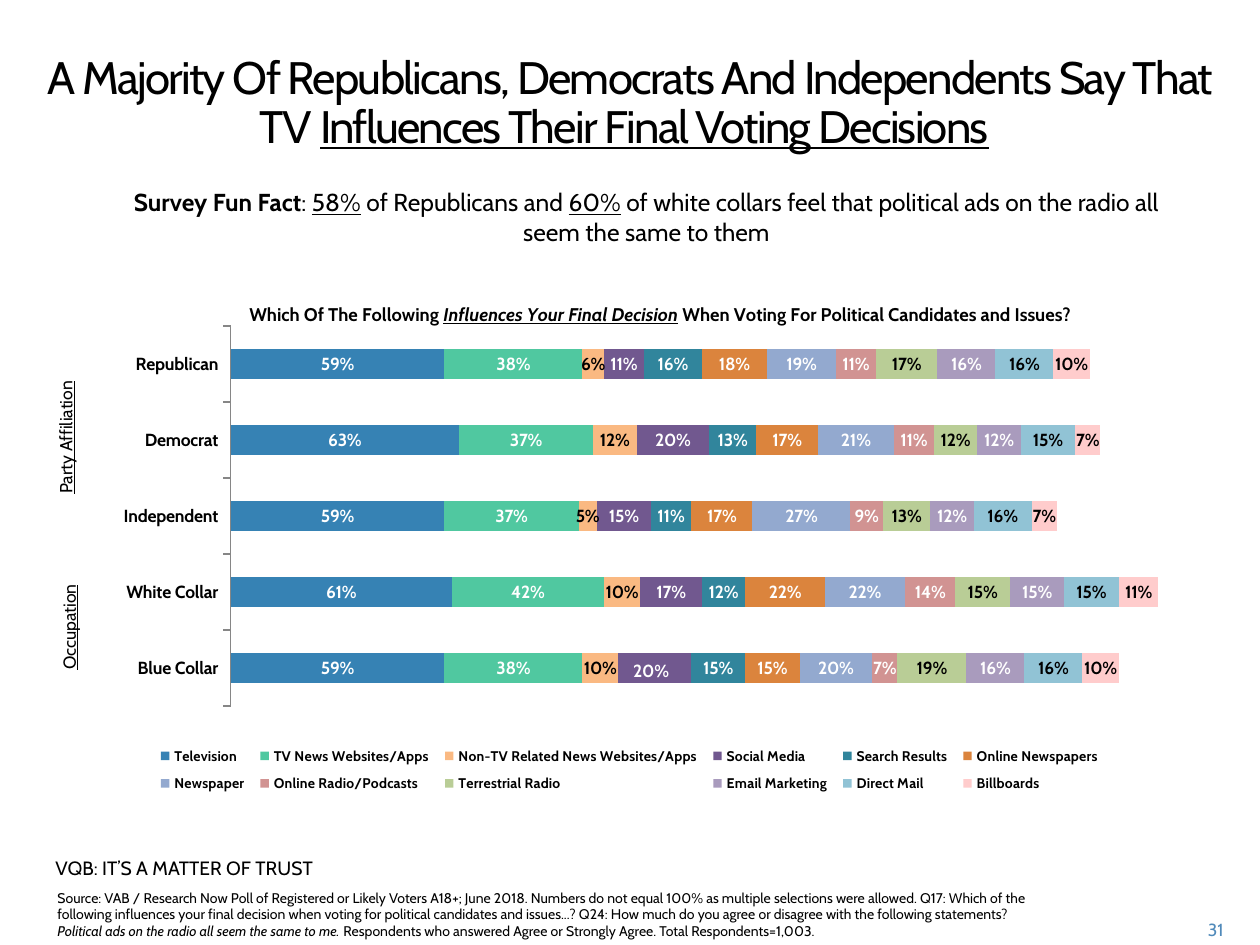
from lxml.etree import SubElement
from pptx import Presentation
from pptx.chart.data import CategoryChartData
from pptx.dml.color import RGBColor
from pptx.enum.chart import XL_CHART_TYPE as Kind, XL_LEGEND_POSITION as Legend, XL_TICK_MARK as Tick
from pptx.enum.text import MSO_ANCHOR as Anchor, PP_ALIGN as Align
from pptx.oxml import parse_xml
from pptx.oxml.ns import nsdecls, qn
from pptx.util import Emu, Pt

FONT = "Cabin"
COLORS = {"black": "000000", "white": "FFFFFF", "number": "508ABA", "axis": "868686"}

# Content: styles are b(old), i(talic), u(nderline)
TITLE = [("A Majority Of Republicans, Democrats And Independents Say That TV ", ""),
         ("Influences Their Final Voting Decisions", "u"), (" ", "")]
FACT = [("Survey Fun Fact", "b"), (": ", ""), ("58%", "u"), (" of Republicans and ", ""),
        ("60%", "u"),
        (" of white collars feel that political ads on the radio all seem the same to them", "")]
SOURCE = [("Source: VAB / Research Now Poll of Registered or Likely Voters A18+; June 2018. "
           "Numbers do not equal 100% as multiple selections were allowed. Q17: Which of the "
           "following influences your final decision when voting for political candidates and "
           "issues...? Q24: How much do you agree or disagree with the following statements? ", ""),
          ("Political ads on the radio all seem the same to me.", "i"),
          (" Respondents who answered Agree or Strongly Agree. Total Respondents=1,003.", "")]
QUESTION = [("Which Of The Following ", "b"), ("Influences Your Final Decision", "biu"),
            (" When Voting For Political Candidates and Issues?", "b")]

# left, top, width, height, spans, size, options
TEXTS = [
    (23, 43, 1213, 121, TITLE, 26,
     dict(align=Align.CENTER, anchor=Anchor.MIDDLE, line=28, tracking=-100)),
    (111, 181, 1071, 50, FACT, 14, dict(align=Align.CENTER)),
    (-20, 418, 171, 39, [("Party Affiliation", "u")], 10, dict(align=Align.CENTER, turn=270)),
    (11, 610, 116, 34, [("Occupation", "u")], 10, dict(align=Align.CENTER, turn=270)),
    (43, 850, 291, 40, [("VQB: IT’S A MATTER OF TRUST", "")], 11, {}),
    (45, 883, 1012, 43, SOURCE, 8, {}),
    (1159, 913, 77, 32, [("31", "")], 10,
     dict(align=Align.RIGHT, anchor=Anchor.MIDDLE, color="number")),
]

CHART_BOX = (71, 261, 1247, 596)
PLOT = (231, 326, 1087, 380)
GROUPS = ["Blue Collar", "White Collar", "Independent", "Democrat", "Republican"]
SERIES = [  # name, percentages, fill, label colour
    ("Television", (59, 61, 59, 63, 59), "3682B4", "white"),
    ("TV News Websites/Apps", (38, 42, 37, 37, 38), "50C8A0", "white"),
    ("Non-TV Related News Websites/Apps", (10, 10, 5, 12, 6), "FAB982", "black"),
    ("Social Media", (20, 17, 15, 20, 11), "71588F", "white"),
    ("Search Results", (15, 12, 11, 13, 16), "31859C", "white"),
    ("Online Newspapers", (15, 22, 17, 17, 18), "DB843D", "white"),
    ("Newspaper", (20, 22, 27, 21, 19), "93A9CF", "white"),
    ("Online Radio/Podcasts", (7, 14, 9, 11, 11), "D19392", "white"),
    ("Terrestrial Radio", (19, 15, 13, 12, 17), "B9CD96", "black"),
    ("Email Marketing", (16, 15, 12, 12, 16), "A99BBD", "white"),
    ("Direct Mail", (16, 15, 16, 15, 16), "91C3D5", "black"),
    ("Billboards", (10, 11, 7, 7, 10), "FFCCCC", "black"),
]


def px(n):
    return Emu(round(n * 914400 / 126))


def rgb(name):
    return RGBColor.from_string(COLORS.get(name, name))


def set_font(font, size, color="black", bold=None):
    font.name, font.size, font.bold = FONT, Pt(size), bold
    font.color.rgb = rgb(color)


def add_spans(para, spans, tracking=None):
    for text, style in spans:
        span = para.add_run()
        span.text = text
        for letter, attribute in (("b", "bold"), ("i", "italic"), ("u", "underline")):
            if letter in style:
                setattr(span.font, attribute, True)
        if tracking:
            span.font._element.set("spc", str(tracking))


def add_text(page, left, top, width, height, spans, size, align=Align.LEFT,
             anchor=Anchor.TOP, color="black", turn=0, line=None, tracking=None):
    box = page.shapes.add_textbox(*map(px, (left, top, width, height)))
    box.rotation = turn
    frame = box.text_frame
    frame.word_wrap = True
    frame.vertical_anchor = Anchor.MIDDLE if turn else anchor
    para = frame.paragraphs[0]
    para.alignment = align
    if line:
        para.line_spacing = Pt(line)
    set_font(para.font, size, color)
    add_spans(para, spans, tracking)


def layout(inner=False, edge=True, **sizes):
    """Manual chart layout from fractions of the chart box."""
    node = parse_xml(f"<c:layout {nsdecls('c')}><c:manualLayout/></c:layout>")
    manual = node[0]
    if inner:
        SubElement(manual, qn("c:layoutTarget")).set("val", "inner")
    if edge:
        for mode in ("xMode", "yMode"):
            SubElement(manual, qn("c:" + mode)).set("val", "edge")
    for key, value in sizes.items():
        SubElement(manual, qn("c:" + key)).set("val", str(round(value, 3)))
    return node


def place(left, top, width=None, height=None, inner=False):
    x, y, w, h = CHART_BOX
    sizes = dict(x=(left - x) / w, y=(top - y) / h)
    if width:
        sizes.update(w=width / w, h=height / h)
    return layout(inner, **sizes)


def set_layout(parent, node, after=None):
    for old in parent.findall(qn("c:layout")):
        parent.remove(old)
    if after is None:
        parent.insert(0, node)
    else:
        parent.find(qn(after)).addnext(node)


def add_survey_chart(page):
    data = CategoryChartData(number_format="0%")
    data.categories = GROUPS
    for name, values, *_ in SERIES:
        data.add_series(name, [value / 100 for value in values])
    chart = page.shapes.add_chart(Kind.BAR_STACKED, *map(px, CHART_BOX), data).chart
    set_font(chart.font, 10)

    # Title, legend and plot area
    title = chart.chart_title
    para = title.text_frame.paragraphs[0]
    set_font(para.font, 10.5, bold=True)
    add_spans(para, QUESTION)
    title.include_in_layout = False
    set_layout(title._element, place(245, 297), "c:tx")
    chart.has_legend = True
    legend = chart.legend
    legend.position, legend.include_in_layout = Legend.BOTTOM, False
    set_font(legend.font, 8, bold=True)
    set_layout(legend._element, place(150, 738, 960, 64), "c:legendPos")
    set_layout(chart._chartSpace.chart.plotArea, place(*PLOT, inner=True))

    # Axes
    groups, values = chart.category_axis, chart.value_axis
    set_font(groups.tick_labels.font, 10, bold=True)
    groups.major_tick_mark = Tick.OUTSIDE
    groups.format.line.color.rgb = rgb("axis")
    values.minimum_scale, values.maximum_scale = 0, 3
    values.has_major_gridlines = False
    values.visible = False

    # Bars and labels
    plot = chart.plots[0]
    plot.gap_width, plot.overlap, plot.vary_by_categories = 150, 100, False
    for series, (name, _, fill, label_color) in zip(plot.series, SERIES):
        series.format.fill.solid()
        series.format.fill.fore_color.rgb = rgb(fill)
        labels = series.data_labels
        labels.show_value = True
        labels.number_format, labels.number_format_is_linked = "0%", False
        set_font(labels.font, 10, label_color, True)
        if name == "Social Media":  # first label sits slightly off centre
            label = series.points[0].data_label
            set_font(label.font, 10, label_color, True)
            set_layout(label._dLbl, layout(edge=False, x=-0.003, y=0.005), "c:idx")


def main():
    deck = Presentation()
    deck.slide_width, deck.slide_height = px(1260), px(945)
    page = deck.slides.add_slide(deck.slide_layouts[6])
    add_survey_chart(page)
    for *where, options in TEXTS:
        add_text(page, *where, **options)
    deck.save("out.pptx")


if __name__ == "__main__":
    main()
